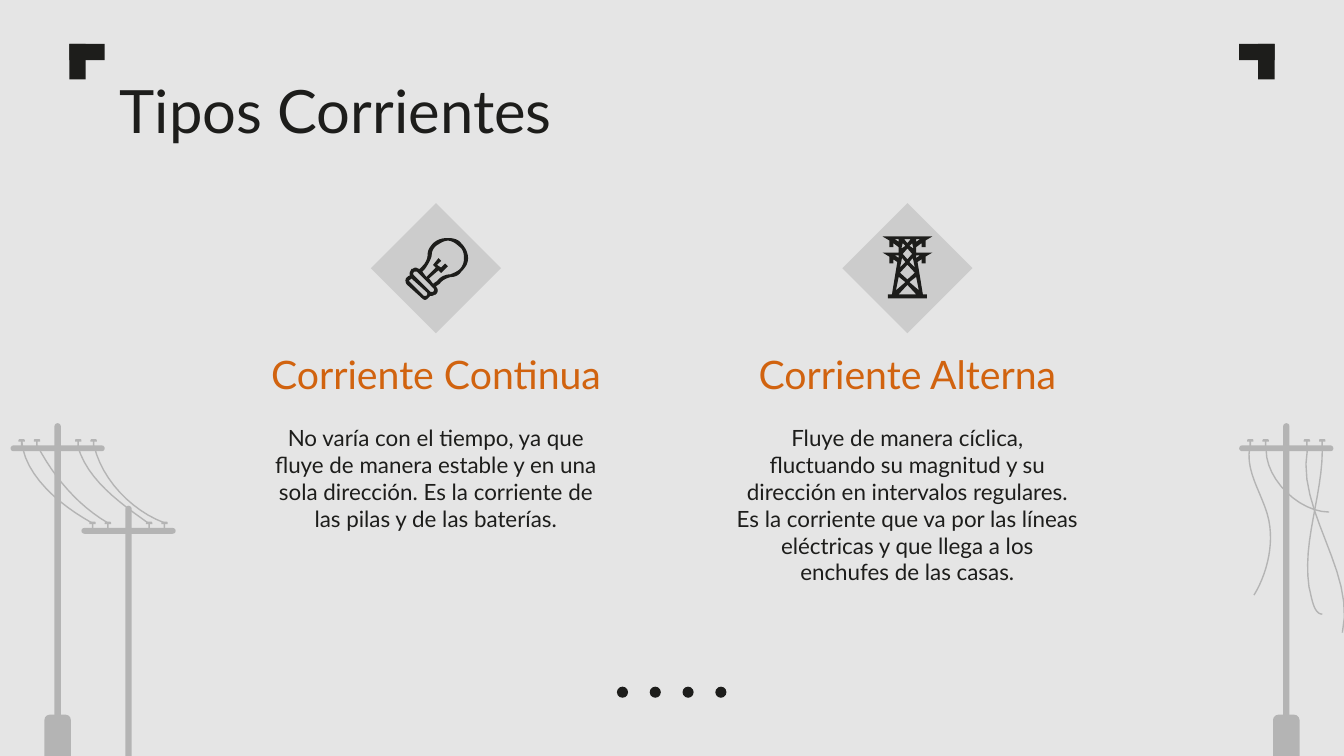
from dataclasses import dataclass

from pptx import Presentation
from pptx.dml.color import RGBColor as Rgb
from pptx.enum.shapes import MSO_SHAPE as Preset
from pptx.enum.text import MSO_ANCHOR as Anchor, MSO_AUTO_SIZE as AutoSize, PP_ALIGN as Align
from pptx.util import Cm, Pt

SLIDE_W, SLIDE_H = 25.4, 14.29
ICON_UNIT = 1.17 / 46  # both icons are drawn on a grid 46 units high


@dataclass(frozen=True)
class Theme:
    font: str = "Lato"
    background: Rgb = Rgb(0xE5, 0xE5, 0xE5)
    ink: Rgb = Rgb(0x1D, 0x1D, 0x1B)
    accent: Rgb = Rgb(0xD1, 0x63, 0x0F)
    badge: Rgb = Rgb(0xCC, 0xCC, 0xCC)
    pole: Rgb = Rgb(0xB4, 0xB4, 0xB4)
    title_size: int = 32
    heading_size: int = 21
    body_size: int = 12
    wire_width: float = 0.75
    inset: float = 0.25


def flatten(contour, steps=12):
    """Turn a contour into points: pairs are corners, sextets are Bézier curves."""
    points = [contour[0]]
    for part in contour[1:]:
        if len(part) == 2:
            points.append(part)
            continue
        (x0, y0), (x1, y1, x2, y2, x3, y3) = points[-1], part
        for step in range(1, steps + 1):
            t = step / steps
            a, b, c, d = (1 - t) ** 3, 3 * t * (1 - t) ** 2, 3 * t * t * (1 - t), t ** 3
            points.append((a * x0 + b * x1 + c * x2 + d * x3,
                           a * y0 + b * y1 + c * y2 + d * y3))
    return points


def mirror(contour):
    return [(-x, y) for x, y in reversed(contour)]


class SlideBuilder:
    def __init__(self, prs, theme):
        self.theme = theme
        self.slide = prs.slides.add_slide(prs.slide_layouts[5])
        self.shapes = self.slide.shapes
        fill = self.slide.background.fill
        fill.solid()
        fill.fore_color.rgb = theme.background

    def start_group(self):
        """Place the shapes that follow in a new group."""
        self.shapes = self.slide.shapes.add_group_shape().shapes

    def end_group(self):
        self.shapes = self.slide.shapes

    def paint(self, shape, color):
        shape.shadow.inherit = False
        shape.fill.solid()
        shape.fill.fore_color.rgb = color
        shape.line.fill.background()

    def preset(self, kind, left, top, width, height, color, rounding=None):
        shape = self.shapes.add_shape(kind, Cm(left), Cm(top), Cm(width), Cm(height))
        self.paint(shape, color)
        if rounding is not None:
            shape.adjustments[0] = rounding

    def outline(self, contours, left=0, top=0, unit=1, close=True):
        """Build one freeform; unit is the length of a grid step in cm."""
        builder = None
        for contour in contours:
            first, *rest = [(Cm(left + x * unit), Cm(top + y * unit))
                            for x, y in flatten(contour)]
            if builder is None:
                builder = self.shapes.build_freeform(*first)
            else:
                builder.move_to(*first)
            builder.add_line_segments(rest, close=close)
        return builder.convert_to_shape()

    def icon(self, contours, left, top):
        self.paint(self.outline(contours, left, top, ICON_UNIT), self.theme.ink)

    def wire(self, curve):
        shape = self.outline([curve], close=False)
        shape.shadow.inherit = False
        shape.fill.background()
        shape.line.color.rgb = self.theme.pole
        shape.line.width = Pt(self.theme.wire_width)

    def pole(self, center, top, has_base):
        def part(kind, offset, down, width, height, rounding=None):
            self.preset(kind, center + offset - width / 2, top + down, width, height,
                        self.theme.pole, rounding)

        part(Preset.ROUNDED_RECTANGLE, 0, 0, 0.12, 5.82, 0.5)
        if has_base:
            part(Preset.ROUNDED_RECTANGLE, 0, 5.51, 0.5, 1.8, 0.2)
        part(Preset.ROUNDED_RECTANGLE, 0, 0.42, 1.78, 0.11, 0.5)
        for offset in (-0.68, -0.39, 0.39, 0.68):
            part(Preset.RECTANGLE, offset, 0.33, 0.03, 0.1)
            part(Preset.ROUND_2_SAME_RECTANGLE, offset, 0.3, 0.12, 0.05, 0.5)

    def bracket(self, left, upright_left):
        self.start_group()
        self.preset(Preset.RECTANGLE, upright_left, 0.83, 0.31, 0.67, self.theme.ink)
        self.preset(Preset.RECTANGLE, left, 0.83, 0.67, 0.31, self.theme.ink)
        self.end_group()

    def set_text(self, shape, text, size, color, align, anchor):
        frame = shape.text_frame
        frame.word_wrap = True
        frame.auto_size = AutoSize.NONE
        frame.vertical_anchor = anchor
        frame.margin_left = frame.margin_right = Cm(self.theme.inset)
        frame.margin_top = frame.margin_bottom = Cm(self.theme.inset)
        paragraph = frame.paragraphs[0]
        paragraph.alignment = align
        run = paragraph.add_run()
        run.text = text
        run.font.name = self.theme.font
        run.font.size = Pt(size)
        run.font.color.rgb = color

    def title(self, text):
        title = self.slide.shapes.title
        title.left, title.top, title.width, title.height = Cm(2.01), Cm(1.14), Cm(21.41), Cm(1.6)
        self.set_text(title, text, self.theme.title_size, self.theme.ink, Align.LEFT, Anchor.TOP)

    def centered_text(self, text, center, top, width, height, size, color, anchor=Anchor.TOP):
        box = self.shapes.add_textbox(Cm(center - width / 2), Cm(top), Cm(width), Cm(height))
        self.set_text(box, text, size, color, Align.CENTER, anchor)

    def column(self, center, heading, body):
        theme = self.theme
        self.preset(Preset.DIAMOND, center - 1.23, 3.84, 2.46, 2.46, theme.badge)
        self.centered_text(heading, center, 6.5, 8.13, 1.27, theme.heading_size,
                           theme.accent, Anchor.BOTTOM)
        self.centered_text(body, center, 7.77, 6.96, 4.88, theme.body_size, theme.ink)


JOINED_WIRES = [
    [(0.41, 8.33), (0.46, 8.99, 1.14, 9.55, 1.73, 9.88)],
    [(0.71, 8.43), (1.02, 9.02, 1.47, 9.55, 2.03, 9.88)],
    [(1.47, 8.43), (1.65, 9.07, 2.26, 9.5, 2.79, 9.88)],
    [(1.78, 8.43), (1.93, 9.07, 2.49, 9.65, 3.1, 9.88)],
]
LOOSE_WIRES = [
    [(23.93, 8.51), (23.93, 9.07, 24.56, 9.68, 25.12, 9.68)],
    [(24.71, 8.48), (24.49, 9.65, 25.63, 10.8, 25.37, 11.96)],
    [(23.62, 8.46), (23.52, 8.97, 23.95, 9.45, 24, 9.96), (24.05, 10.39, 23.93, 10.87, 23.7, 11.25)],
    [(24.99, 8.51), (24.99, 9.37, 24.61, 10.24, 24.74, 11.1), (24.79, 11.28, 24.82, 11.61, 24.99, 11.61)],
]
# The tower is symmetric about x = 0.
TOWER_LEFT_EDGE = [
    (-18.5, 0), (-13.5, 3), (-13.5, 8), (-10.5, 8), (-10.5, 5), (-6.5, 8), (-6.5, 12), (-18.5, 12),
    (-13.5, 15), (-13.5, 20), (-10.5, 20), (-10.5, 17), (-7.5, 19), (-11.5, 43), (-14.5, 43), (-14.5, 46),
]
TOWER_LEFT_GAPS = [
    [(-6.5, 2), (-6.5, 4), (-9.5, 2)],
    [(-3.5, 5), (-1.5, 7), (-4.5, 9)],
    [(-6.5, 14), (-6.5, 16), (-9.5, 14)],
    [(-4, 16), (-1.5, 19), (-5.5, 23)],
    [(-6.5, 30), (-1.5, 34), (-8.5, 40)],
]
TOWER_MIDDLE_GAPS = [
    [(-2.5, 2), (2.5, 2), (0, 5)],
    [(0, 9), (3.5, 13), (0, 17), (-3.5, 13)],
    [(0, 21), (5.5, 27), (0, 32), (-5.5, 27)],
    [(0, 36), (6.5, 43), (-6.5, 43)],
]
TOWER = [TOWER_LEFT_EDGE + mirror(TOWER_LEFT_EDGE), *TOWER_MIDDLE_GAPS,
         *TOWER_LEFT_GAPS, *map(mirror, TOWER_LEFT_GAPS)]
BULB_EDGE = [
    (32, 0), (28, 0, 24, 1, 21, 4), (19, 6, 17, 9, 17, 12), (17, 16, 15, 19, 13, 21), (11, 23),
    (10, 23, 9, 22, 8, 22), (7, 22, 6, 23, 5, 23), (4, 25, 3, 26, 4, 28), (3, 28, 3, 28, 2, 29),
    (0, 30, 0, 33, 2, 35), (12, 44), (13, 45, 14, 46, 15, 46), (16, 46, 17, 45, 18, 44),
    (18, 44, 19, 43, 19, 43), (20, 43), (21, 43, 22, 42, 23, 42), (25, 40, 25, 38, 23, 36), (26, 34),
    (28, 31, 31, 30, 34, 29), (37, 29, 40, 28, 42, 25), (45, 22, 47, 19, 47, 15),
    (47, 11, 45, 7, 42, 4), (40, 1, 36, 0, 32, 0),
]
BULB_GLASS = [
    (32, 2), (35, 2, 38, 4, 40, 6), (43, 8, 44, 11, 44, 15), (44, 18, 43, 21, 41, 23),
    (39, 25, 36, 26, 34, 27), (30, 27, 26, 29, 24, 32), (21, 34), (18, 30), (25, 24), (27, 26),
    (32, 21), (30, 19), (27, 22), (24, 20), (27, 17), (25, 15), (21, 20), (23, 22), (16, 29),
    (13, 25), (15, 23), (17, 20, 19, 17, 20, 13), (20, 10, 21, 8, 23, 6), (26, 4, 29, 2, 32, 2),
]
BULB_THREADS = [
    [(8, 25), (9, 25), (21, 37), (22, 38, 22, 39, 21, 40), (19, 40), (7, 28), (6, 27, 6, 26, 7, 25)],
    [(5, 30), (6, 31), (16, 40), (17, 41, 17, 42, 16, 43), (14, 43), (4, 33), (3, 32, 3, 31, 4, 31)],
]


def main():
    prs = Presentation()
    prs.slide_width, prs.slide_height = Cm(SLIDE_W), Cm(SLIDE_H)
    deck = SlideBuilder(prs, Theme())

    deck.bracket(1.31, 1.31)
    deck.bracket(SLIDE_W - 1.98, SLIDE_W - 1.62)
    deck.start_group()
    for number in range(4):
        deck.preset(Preset.OVAL, 11.66 + number * 0.62, 12.98, 0.21, 0.21, deck.theme.ink)
    for poles, wires in (([(1.09, 8, True), (2.43, 9.56, False)], JOINED_WIRES),
                         ([(24.31, 8, True)], LOOSE_WIRES)):
        deck.start_group()
        for pole in poles:
            deck.pole(*pole)
        for curve in wires:
            deck.wire(curve)
    deck.end_group()

    deck.title("Tipos Corrientes")
    deck.column(8.24, "Corriente Continua",
                "No varía con el tiempo, ya que fluye de manera estable y en una sola "
                "dirección. Es la corriente de las pilas y de las baterías.")
    deck.column(17.15, "Corriente Alterna",
                "Fluye de manera cíclica, fluctuando su magnitud y su dirección en intervalos "
                "regulares. Es la corriente que va por las líneas eléctricas y que llega a los "
                "enchufes de las casas.")
    deck.icon([BULB_EDGE, BULB_GLASS, *BULB_THREADS], 7.65, 4.5)
    deck.icon(TOWER, 17.15, 4.47)
    prs.save("out.pptx")


if __name__ == "__main__":
    main()
